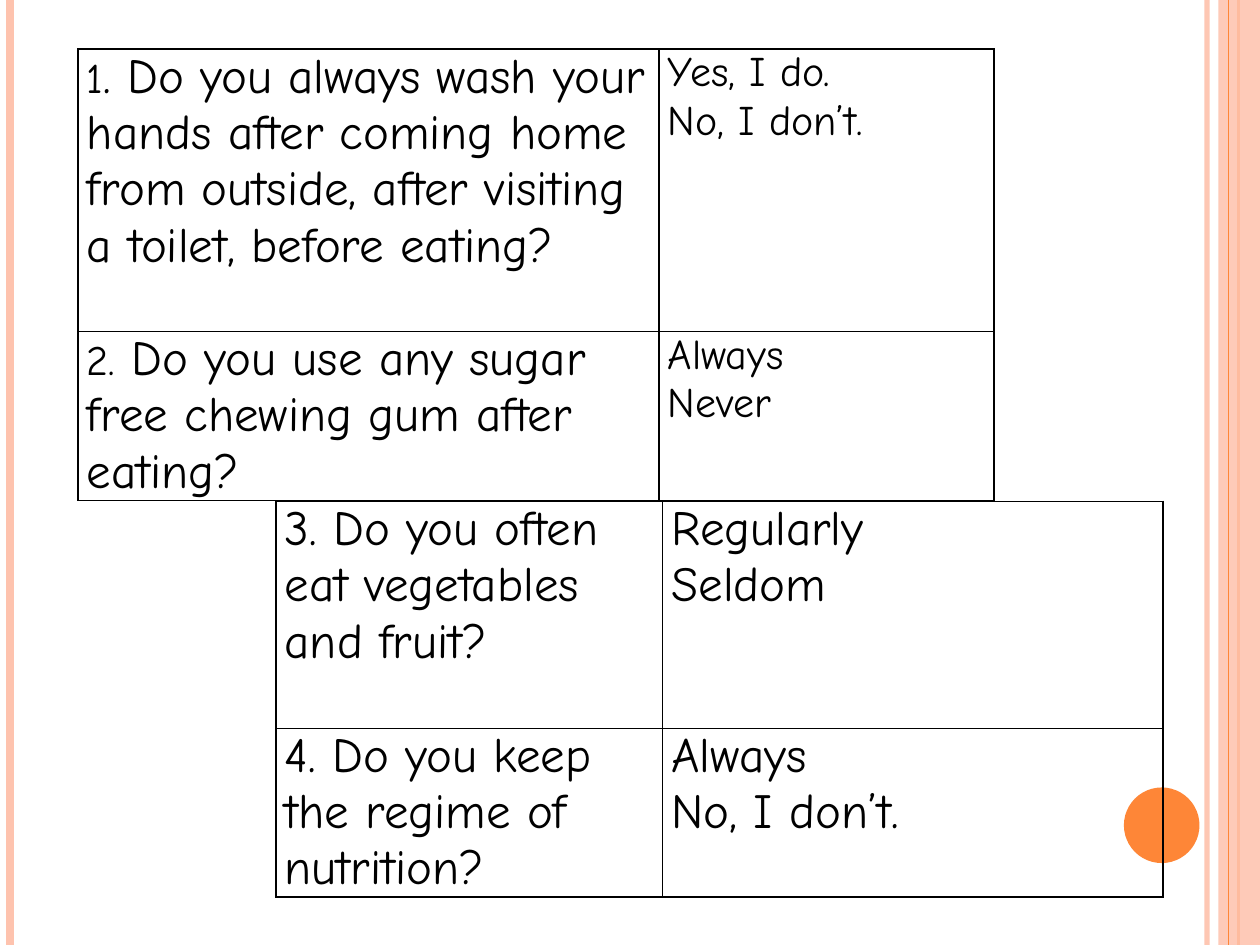
from lxml import etree
from pptx import Presentation
from pptx.dml.color import RGBColor
from pptx.enum import shapes as kinds
from pptx.oxml import ns
from pptx.util import Inches, Pt

PEACH = RGBColor(0xFE, 0xC3, 0xAE)
ORANGE = RGBColor(0xFE, 0x86, 0x37)
BLACK = RGBColor(0, 0, 0)
FONT = "Comic Neue"

deck = Presentation()
deck.slide_width, deck.slide_height = Inches(10), Inches(7.5)
slide = deck.slides.add_slide(deck.slide_layouts[6])
shapes = slide.shapes


def fade(fill, percent):
    """Make a solid fill partly transparent."""
    color = fill._xPr.find(".//" + ns.qn("a:srgbClr"))
    etree.SubElement(color, ns.qn("a:alpha"), val=str(percent * 1000))


def stripe(x, color, width):
    """Draw a vertical line over the full height of the slide."""
    line = shapes.add_connector(kinds.MSO_CONNECTOR.STRAIGHT,
                                Inches(x), 0, Inches(x), deck.slide_height)
    line.line.color.rgb = color
    line.line.width = Pt(width)
    etree.SubElement(line._element.spPr, ns.qn("a:effectLst"))
    return line


# Side stripes, band and dot
fade(stripe(9.58, PEACH, 3).line.fill, 93)
stripe(0.08, PEACH, 4.5)
stripe(9.83, ORANGE, 1.5)
band = shapes.add_shape(kinds.MSO_SHAPE.RECTANGLE,
                        Inches(9.67), 0, Inches(0.33), deck.slide_height)
stripe(9.75, ORANGE, 0.75)
dot = shapes.add_shape(kinds.MSO_SHAPE.OVAL,
                       Inches(8.92), Inches(6.25), Inches(0.6), Inches(0.6))
for shape, color in ((band, PEACH), (dot, ORANGE)):
    shape.shadow.inherit = False
    shape.fill.solid()
    shape.fill.fore_color.rgb = color
    shape.line.fill.background()
fade(band.fill, 87)

# Tables: left, top, column widths, row heights, rows of cells;
# a cell is a list of paragraphs, a paragraph a list of (text, size)
tables = [
    (0.62, 0.39, (4.61, 2.66), (2.24, 0.97), [
        [[[("1", 24), (". Do you always wash your hands after coming home "
                       "from outside, after visiting a toilet, before eating?", 28)]],
         [[("Yes, I do.", 24)], [("No, I don’t.", 24)]]],
        [[[("2.", 24), (" Do you use any sugar free chewing gum after eating?", 28)]],
         [[("Always", 24)], [("Never", 24)]]],
    ]),
    (2.19, 3.98, (3.07, 3.97), (1.8, 1.17), [
        [[[("3. Do you often eat vegetables and fruit?", 28)]],
         [[("Regularly", 28)], [("Seldom", 28)]]],
        [[[("4. Do you keep the regime of nutrition?", 28)]],
         [[("Always", 28)], [("No, I don’t.", 28)]]],
    ]),
]

for left, top, widths, heights, rows in tables:
    table = shapes.add_table(len(rows), len(widths), Inches(left), Inches(top),
                             Inches(sum(widths)), Inches(sum(heights))).table
    table.first_row = table.horz_banding = False
    for col, width in zip(table.columns, widths):
        col.width = Inches(width)
    for row, height, cells in zip(table.rows, heights, rows):
        row.height = Inches(height)
        for cell, paras in zip(row.cells, cells):
            cell.margin_left = cell.margin_right = Inches(0.07)
            cell.margin_top = cell.margin_bottom = 0

            # Black borders, no fill
            props = cell._tc.get_or_add_tcPr()
            for side in ("lnL", "lnR", "lnT", "lnB"):
                edge = etree.SubElement(props, ns.qn("a:" + side), w=str(Pt(1)))
                paint = etree.SubElement(edge, ns.qn("a:solidFill"))
                etree.SubElement(paint, ns.qn("a:srgbClr"), val=str(BLACK))
            cell.fill.background()

            # Text
            frame = cell.text_frame
            for i, runs in enumerate(paras):
                para = frame.add_paragraph() if i else frame.paragraphs[0]
                para.font.name = FONT
                para.font.color.rgb = BLACK
                para.font.size = Pt(runs[-1][1])
                for words, size in runs:
                    run = para.add_run()
                    run.text = words
                    if size != runs[-1][1]:
                        run.font.size = Pt(size)

deck.save("out.pptx")
